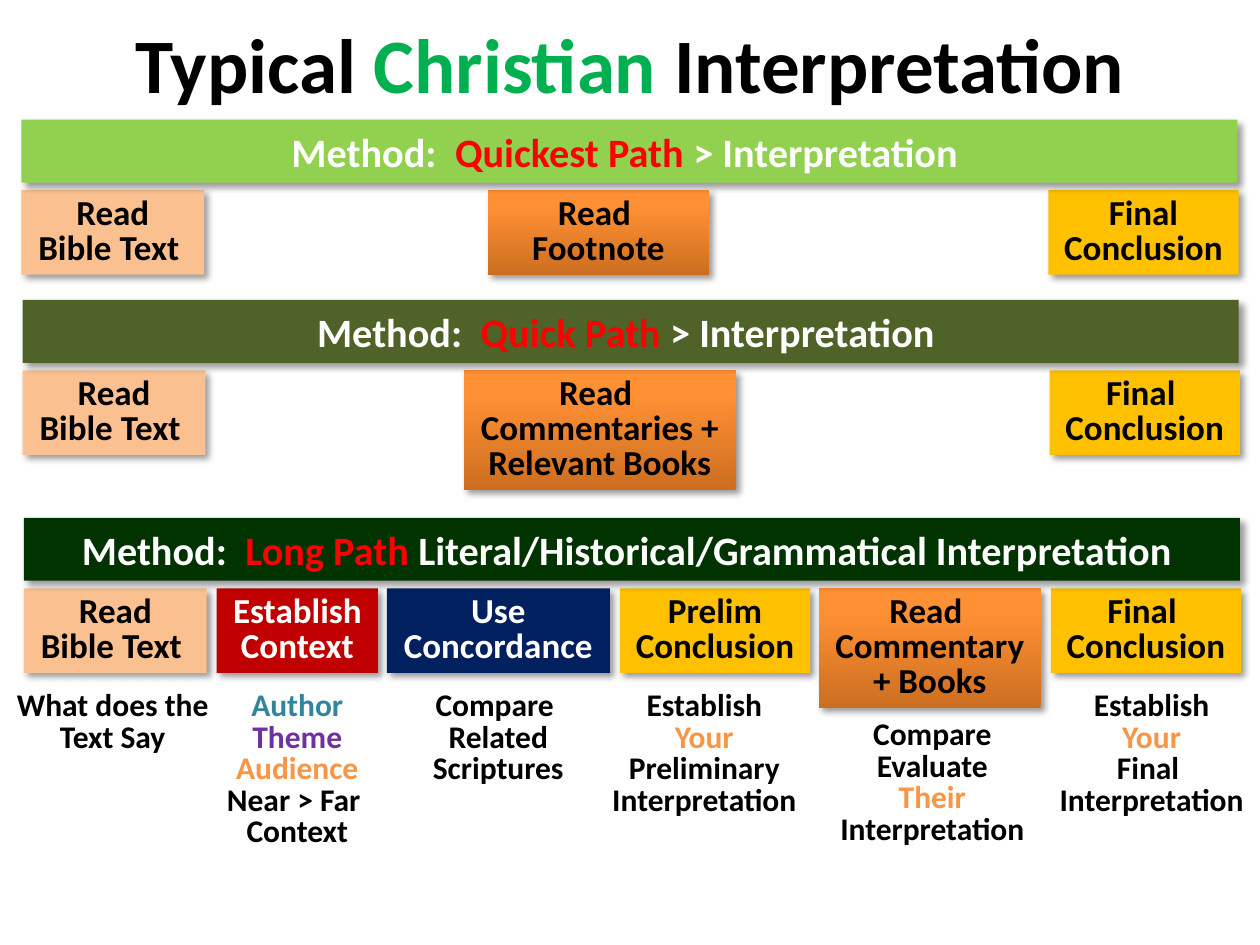
import pptx
import pptx.dml.color
import pptx.enum.shapes
import pptx.enum.text
import pptx.oxml
import pptx.oxml.ns
import pptx.util

Inches = pptx.util.Inches
Pt = pptx.util.Pt
ANCHOR = pptx.enum.text.MSO_ANCHOR

COLORS = {
    "black": "000000", "white": "FFFFFF", "red": "FF0000", "green": "00B050",
    "lime": "92D050", "olive": "4F6228", "forest": "003300",
    "peach": "FAC090", "gold": "FFC000", "crimson": "C00000", "navy": "002060",
    "teal": "31859C", "purple": "7030A0", "orange": "F79646",
}
ORANGE_STOPS = ((0, "CC6E20"), (80, "FF9034"), (100, "FF9136"))
NS = pptx.oxml.ns.nsdecls("a")

READ = ("peach", 0, 1.45, ["Read", "Bible Text "])
FINAL = ("gold", 8.15, 1.51, ["Final ", "Conclusion"])

METHODS = [
    (0.17, 0.95, "lime", "Quickest Path ", "> Interpretation ", [
        READ,
        ("gradient", 3.7, 1.76, ["Read ", "Footnote"]),
        ("gold", 8.15, 1.51, ["Final", "Conclusion"]),
    ]),
    (0.18, 2.38, "olive", "Quick Path ", "> Interpretation ", [
        READ,
        ("gradient", 3.5, 2.16, ["Read ", "Commentaries +", "Relevant Books"]),
        FINAL,
    ]),
    (0.19, 4.11, "forest", "Long Path ",
     "Literal/Historical/Grammatical Interpretation ", [
         READ,
         ("crimson", 1.53, 1.28, ["Establish", "Context"]),
         ("navy", 2.88, 1.77, ["Use", "Concordance"]),
         ("gold", 4.73, 1.51, ["Prelim", "Conclusion"]),
         ("gradient", 6.31, 1.76, ["Read ", "Commentary", "+ Books"]),
         FINAL,
     ]),
]

NOTES = [
    (0.01, 5.44, 1.77, 0.61, [[("What does the Text Say", "black")]]),
    (1.68, 5.44, 1.36, 1.37, [[("Author", "teal")], [("Theme", "purple")],
                              [("Audience", "orange")], [("Near > Far ", "black")],
                              [("Context", "black")]]),
    (3.07, 5.44, 1.77, 0.86, [[("Compare ", "black")],
                              [("Related Scriptures", "black")]]),
    (4.69, 5.44, 1.8, 1.11, [[("Establish", "black")], [("Your", "orange")],
                             [("Preliminary Interpretation", "black")]]),
    (6.5, 5.67, 1.8, 1.11, [[("Compare Evaluate", "black")],
                            [("Their ", "orange"), ("Interpretation", "black")]]),
    (8.27, 5.44, 1.74, 1.11, [[("Establish", "black")], [("Your", "orange")],
                              [("Final ", "black")], [("Interpretation", "black")]]),
]


def rgb(name):
    """Return the named colour."""
    return pptx.dml.color.RGBColor.from_string(COLORS[name])


def write(tf, paragraphs, size, spacing=None, wrap=True, anchor=ANCHOR.TOP):
    """Fill a text frame with centred bold paragraphs of (text, colour) runs."""
    tf.word_wrap = wrap
    tf.auto_size = pptx.enum.text.MSO_AUTO_SIZE.NONE
    tf.vertical_anchor = anchor
    for i, runs in enumerate(paragraphs):
        p = tf.add_paragraph() if i else tf.paragraphs[0]
        p.alignment = pptx.enum.text.PP_ALIGN.CENTER
        if spacing:
            p.line_spacing = Pt(spacing)
        for text, color in runs:
            r = p.add_run()
            r.text = text
            r.font.name = "Calibri"
            r.font.size = Pt(size)
            r.font.bold = True
            r.font.color.rgb = rgb(color)


def add_box(slide, left, top, width, height, color):
    """Add a borderless rectangle with a soft shadow."""
    sp = slide.shapes.add_shape(
        pptx.enum.shapes.MSO_SHAPE.RECTANGLE,
        Inches(left), Inches(top), Inches(width), Inches(height))
    sp.line.fill.background()
    props = sp.fill._xPr
    if color == "gradient":
        stops = "".join(f'<a:gs pos="{pos * 1000}"><a:srgbClr val="{value}"/></a:gs>'
                        for pos, value in ORANGE_STOPS)
        props.find(pptx.oxml.ns.qn("a:prstGeom")).addnext(pptx.oxml.parse_xml(
            f'<a:gradFill {NS} rotWithShape="1"><a:gsLst>{stops}</a:gsLst>'
            '<a:lin ang="16200000" scaled="0"/></a:gradFill>'))
    else:
        sp.fill.solid()
        sp.fill.fore_color.rgb = rgb(color)
    props.append(pptx.oxml.parse_xml(
        f'<a:effectLst {NS}><a:outerShdw blurRad="{Pt(4)}" dist="{Pt(3)}" '
        'dir="2700000" algn="tl" rotWithShape="0"><a:srgbClr val="000000">'
        '<a:alpha val="40000"/></a:srgbClr></a:outerShdw></a:effectLst>'))
    return sp


def add_title(slide, left, top, width, height):
    """Place the slide title."""
    sp = slide.shapes.title
    sp.left, sp.top = Inches(left), Inches(top)
    sp.width, sp.height = Inches(width), Inches(height)
    write(sp.text_frame, [[("Typical ", "black"), ("Christian ", "green"),
                           ("Interpretation", "black")]], 44)


def add_method(slide, left, top, color, path_name, goal, steps):
    """Add a method band with its row of step boxes below."""
    for fill, offset, width, lines in steps:
        sp = add_box(slide, left + offset, top + 0.56, width,
                     0.11 + 0.28 * len(lines), fill)
        ink = "white" if fill in ("crimson", "navy") else "black"
        write(sp.text_frame, [[(line, ink)] for line in lines], 20,
              spacing=20, wrap=False, anchor=ANCHOR.MIDDLE)
    band = add_box(slide, left, top, 9.65, 0.5, color)
    write(band.text_frame, [[("Method:  ", "white"), (path_name, "red"),
                             (goal, "white")]], 23, anchor=ANCHOR.MIDDLE)


def add_note(slide, left, top, width, height, paragraphs):
    """Add an explanatory note under a step."""
    sp = slide.shapes.add_textbox(
        Inches(left), Inches(top), Inches(width), Inches(height))
    write(sp.text_frame, paragraphs, 18, spacing=18)


def main():
    """Build and save the slide."""
    prs = pptx.Presentation()
    prs.slide_width, prs.slide_height = Inches(10), Inches(7.5)
    slide = prs.slides.add_slide(prs.slide_layouts[5])
    add_title(slide, 0, 0.08, 10, 0.84)
    for method in METHODS:
        add_method(slide, *method)
    for note in NOTES:
        add_note(slide, *note)
    prs.save("out.pptx")


if __name__ == "__main__":
    main()
